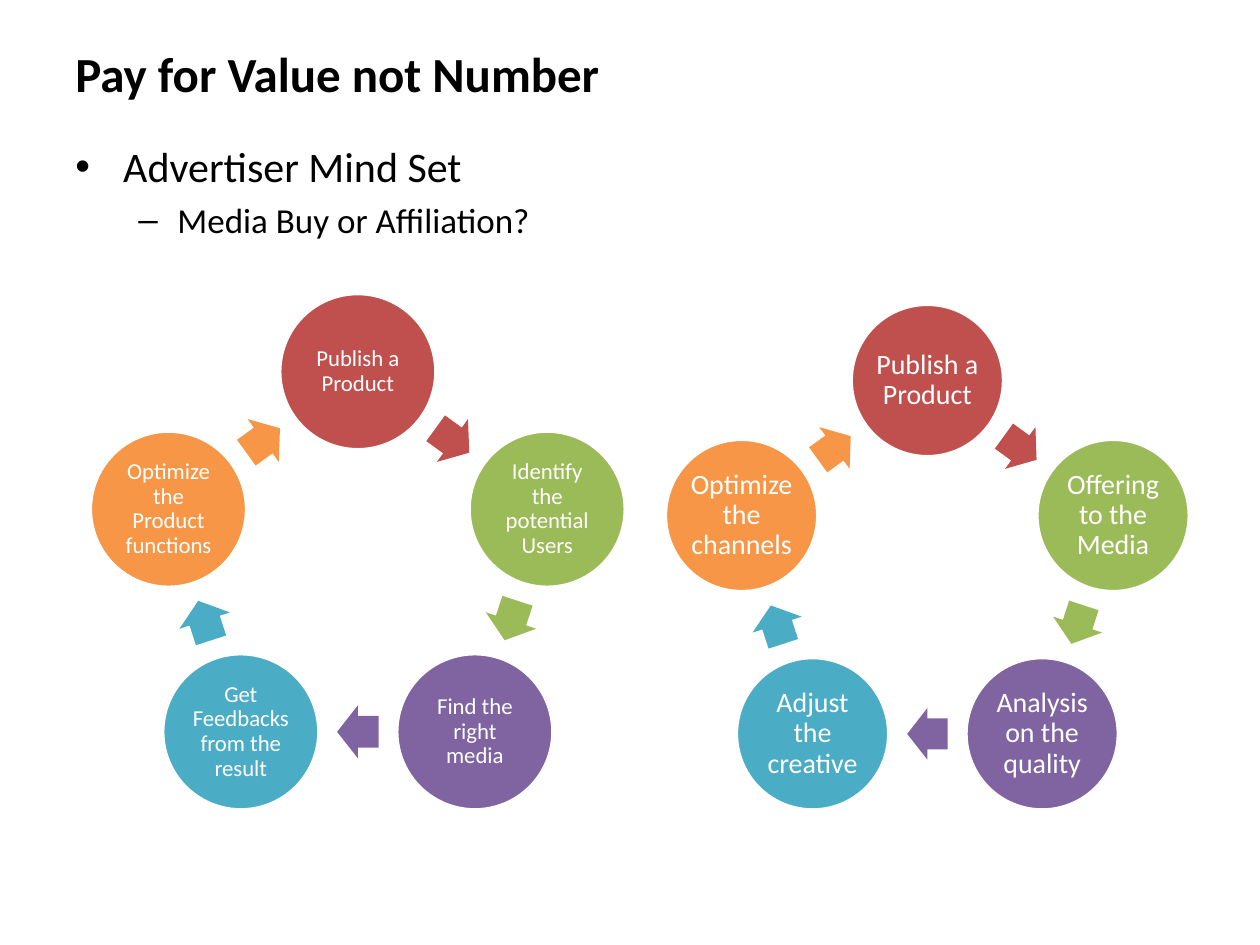
import math
from dataclasses import dataclass

import pptx
import pptx.dml.color
import pptx.enum.shapes
import pptx.enum.text
import pptx.oxml.ns
import pptx.util
from lxml import etree

Inches = pptx.util.Inches
Pt = pptx.util.Pt
RGBColor = pptx.dml.color.RGBColor
Shape = pptx.enum.shapes.MSO_SHAPE
Anchor = pptx.enum.text.MSO_ANCHOR

FONT = "Calibri"
BLACK = RGBColor(0x00, 0x00, 0x00)
WHITE = RGBColor(0xFF, 0xFF, 0xFF)
RED = RGBColor(0xC0, 0x50, 0x4D)
GREEN = RGBColor(0x9B, 0xBB, 0x59)
PURPLE = RGBColor(0x80, 0x64, 0xA2)
TEAL = RGBColor(0x4B, 0xAC, 0xC6)
ORANGE = RGBColor(0xF7, 0x96, 0x46)
STEP_COLORS = (RED, GREEN, PURPLE, TEAL, ORANGE)


@dataclass(frozen=True)
class Bullet:
    text: str
    level: int
    mark: str
    size: int
    margin: float
    hanging: float
    space_before: int


@dataclass(frozen=True)
class Cycle:
    center_x: float
    center_y: float
    radius: float
    diameter: float
    arrow_length: float
    arrow_width: float
    font_size: int
    steps: tuple[str, ...]


BULLETS = (
    Bullet("Advertiser Mind Set", 0, "•", 24, 0.38, 0.38, 0),
    Bullet("Media Buy or Affiliation?", 1, "–", 20, 0.81, 0.31, 4),
)
CYCLES = (
    Cycle(2.84, 4.53, 1.58, 1.24, 0.33, 0.42, 13, (
        "Publish a Product",
        "Identify the potential Users",
        "Find the right media",
        "Get Feedbacks from the result",
        "Optimize the Product functions",
    )),
    Cycle(7.36, 4.57, 1.55, 1.21, 0.32, 0.41, 16, (
        "Publish a Product",
        "Offering to the Media",
        "Analysis on the quality",
        "Adjust the creative",
        "Optimize the channels",
    )),
)


def add_span(para, text: str, size: int, color: RGBColor, bold: bool = False) -> None:
    span = para.add_run()
    span.text = text
    span.font.name = FONT
    span.font.size = Pt(size)
    span.font.bold = bold
    span.font.color.rgb = color


def add_text_frame(page, left: float, top: float, width: float, height: float):
    box = page.shapes.add_textbox(
        Inches(left), Inches(top), Inches(width), Inches(height))
    box.text_frame.word_wrap = True
    return box.text_frame


def set_bullet(para, bullet: Bullet) -> None:
    properties = para._p.get_or_add_pPr()
    properties.set("marL", str(Inches(bullet.margin)))
    properties.set("indent", str(-Inches(bullet.hanging)))
    for tag, name, value in (("a:buFont", "typeface", "Arial"),
                             ("a:buChar", "char", bullet.mark)):
        mark = etree.SubElement(properties, pptx.oxml.ns.qn(tag))
        mark.set(name, value)


def add_bullets(page) -> None:
    frame = add_text_frame(page, 0.5, 1.07, 9, 5.63)
    for index, bullet in enumerate(BULLETS):
        para = frame.add_paragraph() if index else frame.paragraphs[0]
        set_bullet(para, bullet)
        para.level = bullet.level
        para.space_before = Pt(bullet.space_before)
        add_span(para, bullet.text, bullet.size, BLACK)


def add_centered(page, kind, x: float, y: float, width: float, height: float,
                 color: RGBColor):
    """Add a filled shape whose middle is at x, y."""
    shape = page.shapes.add_shape(
        kind, Inches(x - width / 2), Inches(y - height / 2),
        Inches(width), Inches(height))
    shape.shadow.inherit = False
    shape.fill.solid()
    shape.fill.fore_color.rgb = color
    shape.line.fill.background()
    return shape


def add_step(page, cycle: Cycle, index: int) -> None:
    angle = math.radians(index * 360 / len(cycle.steps))
    x = cycle.center_x + cycle.radius * math.sin(angle)
    y = cycle.center_y - cycle.radius * math.cos(angle)
    circle = add_centered(page, Shape.OVAL, x, y, cycle.diameter, cycle.diameter,
                          STEP_COLORS[index])
    circle.line.color.rgb = WHITE
    circle.line.width = Pt(2)
    frame = circle.text_frame
    frame.word_wrap = True
    frame.vertical_anchor = Anchor.MIDDLE
    frame.margin_left = frame.margin_right = Inches(0.02)
    frame.margin_top = frame.margin_bottom = Inches(0.02)
    para = frame.paragraphs[0]
    para.alignment = pptx.enum.text.PP_ALIGN.CENTER
    para.line_spacing = 0.9
    add_span(para, cycle.steps[index], cycle.font_size, WHITE)


def add_arrow(page, cycle: Cycle, index: int) -> None:
    """Add the arrow halfway between a step and the next one."""
    turn = 360 / len(cycle.steps)
    rotation = (index + 0.5) * turn
    angle = math.radians(rotation)
    reach = cycle.radius * math.cos(math.radians(turn / 2))
    arrow = add_centered(
        page, Shape.RIGHT_ARROW,
        cycle.center_x + reach * math.sin(angle),
        cycle.center_y - reach * math.cos(angle),
        cycle.arrow_length, cycle.arrow_width, STEP_COLORS[index])
    arrow.rotation = rotation
    arrow.adjustments[0] = 0.6
    arrow.adjustments[1] = 0.5


def main() -> None:
    deck = pptx.Presentation()
    deck.slide_width = Inches(10)
    deck.slide_height = Inches(7.5)
    page = deck.slides.add_slide(deck.slide_layouts[6])

    title = add_text_frame(page, 0.5, 0.3, 9, 0.87)
    add_span(title.paragraphs[0], "Pay for Value not Number", 28, BLACK, bold=True)
    add_bullets(page)
    for cycle in CYCLES:
        for index in range(len(cycle.steps)):
            add_step(page, cycle, index)
            add_arrow(page, cycle, index)
    deck.save("out.pptx")


if __name__ == "__main__":
    main()
